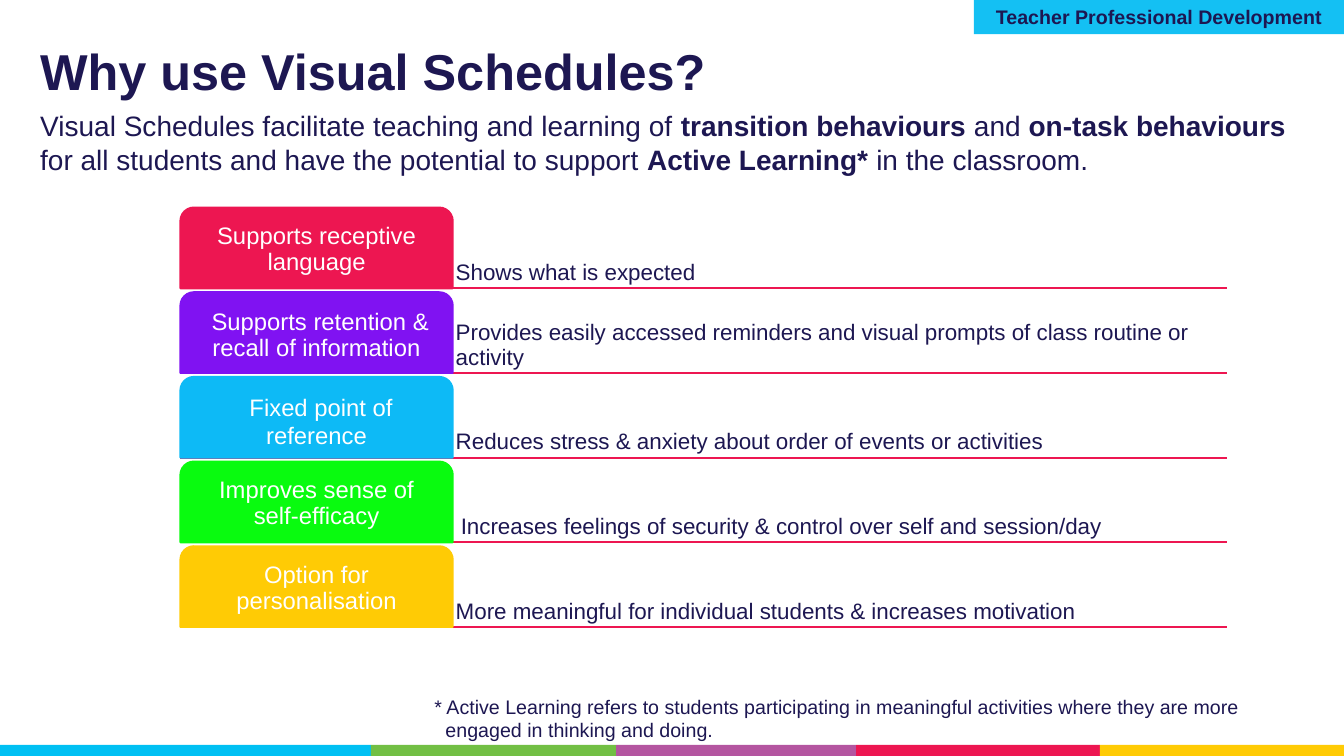
from itertools import pairwise

from lxml import etree
from pptx import Presentation
from pptx.dml.color import RGBColor
from pptx.enum.shapes import MSO_CONNECTOR, MSO_SHAPE
from pptx.enum.text import MSO_ANCHOR, PP_ALIGN
from pptx.oxml.ns import qn
from pptx.util import Pt

EMU_PER_PX = 9144
RECT = MSO_SHAPE.RECTANGLE
TAB = MSO_SHAPE.ROUND_2_SAME_RECTANGLE
STRAIGHT = MSO_CONNECTOR.STRAIGHT
TOP, MIDDLE, BOTTOM = MSO_ANCHOR.TOP, MSO_ANCHOR.MIDDLE, MSO_ANCHOR.BOTTOM
LEFT, CENTER = PP_ALIGN.LEFT, PP_ALIGN.CENTER

NAVY = RGBColor(0x1D, 0x17, 0x52)
WHITE = RGBColor(0xFF, 0xFF, 0xFF)
CRIMSON = RGBColor(0xED, 0x16, 0x51)
PURPLE = RGBColor(0x80, 0x12, 0xF2)
SKY = RGBColor(0x0D, 0xBA, 0xF6)
LIME = RGBColor(0x09, 0xFB, 0x0F)
YELLOW = RGBColor(0xFF, 0xCB, 0x05)
BANNER_BLUE = RGBColor(0x14, 0xC0, 0xF3)
STRIPE_BLUE = RGBColor(0x00, 0xC0, 0xF3)
LEAF = RGBColor(0x72, 0xBF, 0x44)
MAUVE = RGBColor(0xB4, 0x55, 0xA0)

STRIPE_EDGES = [0, 368, 611, 849, 1091, 1333]
STRIPE_COLORS = [STRIPE_BLUE, LEAF, MAUVE, CRIMSON, YELLOW]

BENEFITS = [
    (CRIMSON, [("Supports receptive language", 17)],
     [("Shows what is expected", 16)]),
    (PURPLE, [(" ", 19), ("Supports retention & recall of information", 17)],
     [("Provides easily accessed reminders and visual prompts of class routine or activity", 16)]),
    (SKY, [(" ", 23), ("Fixed point of reference", 17)],
     [("Reduces stress & anxiety about order of events or activities", 16)]),
    (LIME, [("Improves sense of", 17), ("\v", 17), ("self-efficacy", 17)],
     [(" ", 13), ("Increases feelings of security & control over self and session/day", 16)]),
    (YELLOW, [("Option for personalisation", 17)],
     [("More meaningful for individual students & increases motivation", 16)]),
]


def px(length):
    """Turn px into EMU."""
    return round(length * EMU_PER_PX)


def write_runs(paragraph, runs, color=NAVY, bold=False):
    """Add (text, size) or (text, size, bold) runs to a paragraph."""
    for text, size, *weight in runs:
        if text == "\v":
            paragraph.add_line_break()
            continue
        run = paragraph.add_run()
        run.text = text
        run.font.color.rgb = color
        style = {"name": "Arial", "size": Pt(size), "bold": weight[0] if weight else bold}
        for key, value in style.items():
            setattr(run.font, key, value)


def add_text(slide, box, paragraphs, insets=(10, 5, 10, 5), anchor=TOP,
             align=LEFT, spacing=1.0, color=NAVY, bold=False):
    """Place a wrapping text box holding lists of runs."""
    frame = slide.shapes.add_textbox(*map(px, box)).text_frame
    left, top, right, bottom = map(px, insets)
    layout = {"word_wrap": True, "vertical_anchor": anchor, "margin_left": left,
              "margin_top": top, "margin_right": right, "margin_bottom": bottom}
    for key, value in layout.items():
        setattr(frame, key, value)
    for index, runs in enumerate(paragraphs):
        paragraph = frame.add_paragraph() if index else frame.paragraphs[0]
        paragraph.alignment = align
        paragraph.line_spacing = spacing
        write_runs(paragraph, runs, color, bold)
    return frame


def add_block(slide, kind, box, color):
    """Place a flat filled shape."""
    block = slide.shapes.add_shape(kind, *map(px, box))
    block.shadow.inherit = False
    block.fill.solid()
    block.fill.fore_color.rgb = color
    block.line.fill.background()
    return block


def add_rule(slide, left, right, y):
    """Draw a horizontal crimson rule."""
    rule = slide.shapes.add_connector(STRAIGHT, px(left), px(y), px(right), px(y))
    rule.line.color.rgb = CRIMSON
    rule.line.width = Pt(1.5)
    etree.SubElement(rule._element.spPr, qn("a:effectLst"))


def add_footer_stripe(slide, top, height):
    """Draw the coloured stripe along the foot of the slide."""
    for (left, right), color in zip(pairwise(STRIPE_EDGES), STRIPE_COLORS):
        add_block(slide, RECT, (left, top, right - left, height), color)


def add_banner(slide, box):
    """Draw the programme banner in the corner."""
    banner = add_block(slide, RECT, box, BANNER_BLUE)
    frame = banner.text_frame
    frame.vertical_anchor = MIDDLE
    heading = frame.paragraphs[0]
    heading.alignment = CENTER
    write_runs(heading, [("Teacher Professional Development", 14)], bold=True)


def add_heading(slide, left, top):
    """Place the title and the introduction beneath it."""
    add_text(slide, (left, top, 800, 62), [[("Why use Visual Schedules?", 36)]],
             insets=(10, 0, 10, 5), spacing=0.9, bold=True)
    intro = [
        ("Visual Schedules facilitate teaching and learning of ", 20),
        ("transition behaviours", 20, True),
        (" and ", 20),
        ("on-task behaviours", 20, True),
        (" for all students and have the potential to support ", 20),
        ("Active Learning* ", 20, True),
        ("in the classroom.", 20),
    ]
    add_text(slide, (left, top + 61, 1258, 72), [intro], insets=(10, 0, 10, 5))


def add_benefit(slide, box, color, label, detail):
    """Draw one benefit: a tab, its rule and its explanation."""
    left, top, width, height = box
    tab_width = 270
    add_rule(slide, left, left + width, top + height)
    add_text(slide, (left + tab_width, top, width - tab_width, height), [detail],
             insets=(3, 3, 3, 3), anchor=BOTTOM, spacing=0.9)
    tab = add_block(slide, TAB, (left, top, tab_width, height), color)
    tab.line.color.rgb = color
    tab.line.width = Pt(1.5)
    add_text(slide, (left + 4, top + 4, tab_width - 8, height - 4), [label],
             insets=(4, 4, 4, 4), anchor=MIDDLE, align=CENTER, spacing=0.9, color=WHITE)


def add_benefits(slide, box):
    """Stack the benefits evenly in the box."""
    left, top, width, height = box
    pitch = height // len(BENEFITS)
    for index, benefit in enumerate(BENEFITS):
        add_benefit(slide, (left, top + index * pitch, width, pitch - 4), *benefit)


def add_footnote(slide, box):
    """Place the footnote with its second line indented."""
    lines = [
        "* Active Learning refers to students participating in meaningful activities where they are more",
        "engaged in thinking and doing.",
    ]
    frame = add_text(slide, box, [[(line, 14)] for line in lines])
    frame.paragraphs[1]._p.get_or_add_pPr().set("marL", str(px(11)))


def main():
    """Build and save the slide."""
    deck = Presentation()
    deck.slide_width, deck.slide_height = px(1333), px(750)
    slide = deck.slides.add_slide(deck.slide_layouts[6])
    add_footer_stripe(slide, 739, 11)
    add_heading(slide, 30, 47)
    add_benefits(slide, (179, 206, 1038, 420))
    add_footnote(slide, (421, 684, 912, 57))
    add_banner(slide, (966, 0, 367, 34))
    deck.save("out.pptx")


if __name__ == "__main__":
    main()
